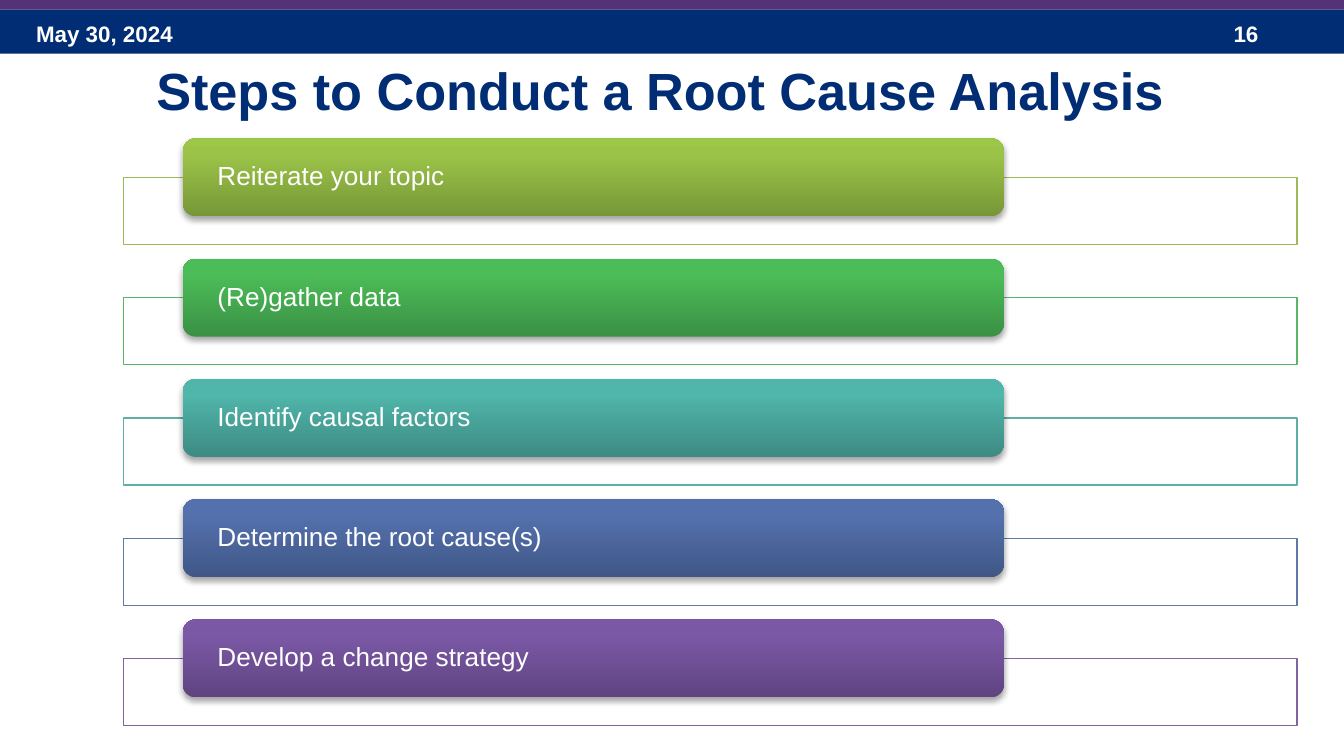
from lxml import etree
from pptx import Presentation
from pptx.dml.color import RGBColor
from pptx.enum.shapes import MSO_SHAPE
from pptx.enum.text import MSO_ANCHOR, MSO_AUTO_SIZE, PP_ALIGN
from pptx.oxml import parse_xml
from pptx.oxml.ns import nsdecls, qn
from pptx.util import Inches, Pt

RECT, ROUND = MSO_SHAPE.RECTANGLE, MSO_SHAPE.ROUNDED_RECTANGLE
TOP, MIDDLE = MSO_ANCHOR.TOP, MSO_ANCHOR.MIDDLE
LEFT, CENTER = PP_ALIGN.LEFT, PP_ALIGN.CENTER
NO_FIT = MSO_AUTO_SIZE.NONE

THEME = {
    "font": "Arial",
    "navy": "002D73",
    "purple": "553278",
    "white": "FFFFFF",
    "shadow": "000000",
    "title": 28,
    "body": 14,
    "small": 12,
    "steps": [
        ("9BBB59", "779737", "9BC348", "9DC746"),
        ("5CB565", "3A9144", "4CBC58", "4ABF57"),
        ("5EAFA6", "3D8B83", "50B5AA", "4EB8AC"),
        ("6179A8", "405786", "5471AE", "5271B0"),
        ("8064A2", "5F4480", "7B58A6", "7C57A8"),
    ],
}
STEPS = [
    "Reiterate your topic",
    "(Re)gather data",
    "Identify causal factors",
    "Determine the root cause(s)",
    "Develop a change strategy",
]


def write(shape, text, size, color="white", bold=False, align=LEFT,
          anchor=MIDDLE, side=0.1, top=0, spacing=1.0):
    frame = shape.text_frame
    frame.word_wrap = True
    frame.auto_size = NO_FIT
    frame.vertical_anchor = anchor
    frame.margin_left = frame.margin_right = Inches(side)
    frame.margin_top, frame.margin_bottom = Inches(top), 0
    para = frame.paragraphs[0]
    para.text = text
    para.alignment = align
    para.line_spacing = spacing
    font = para.runs[0].font
    font.name, font.size, font.bold = THEME["font"], Pt(THEME[size]), bold
    font.color.rgb = RGBColor.from_string(THEME[color])


def block(kind, left, top, width, height, color="white"):
    shape = slide.shapes.add_shape(
        kind, Inches(left), Inches(top), Inches(width), Inches(height))
    shape.shadow.inherit = False
    shape.fill.solid()
    shape.fill.fore_color.rgb = RGBColor.from_string(THEME[color])
    shape.line.fill.background()
    return shape


deck = Presentation()
deck.slide_width, deck.slide_height = Inches(10), Inches(10 * 9 / 16)
slide = deck.slides.add_slide(deck.slide_layouts[5])

block(RECT, 0, 0.07, 10, 0.33, "navy")
for text, left, width in [("May 30, 2024", 0.17, 2.33), ("16", 9.08, 0.75)]:
    label = slide.shapes.add_textbox(
        Inches(left), Inches(0.1), Inches(width), Inches(0.3))
    write(label, text, "small", bold=True)
block(RECT, 0, -0.02, 10, 0.09, "purple")

title = slide.shapes.title
title.left, title.top = Inches(0.16), Inches(0.38)
title.width, title.height = Inches(9.5), Inches(0.7)
write(title, "Steps to Conduct a Root Cause Analysis", "title", color="navy",
      bold=True, align=CENTER, anchor=TOP, top=0.05)

first, last = 1.03, 4.61
pitch = (last - first) / (len(STEPS) - 1)
for row, (text, tones) in enumerate(zip(STEPS, THEME["steps"])):
    edge, *stops = tones
    top = first + row * pitch

    panel = block(RECT, 0.92, top + 0.29, 8.73, 0.5)
    panel.line.color.rgb = RGBColor.from_string(edge)
    panel.line.width = Pt(0.75)
    tint = panel.fill._xPr.find(qn("a:solidFill"))[0]
    etree.SubElement(tint, qn("a:alpha"), val="90000")

    bar = block(ROUND, 1.36, top, 6.11, 0.58)
    marks = "".join(
        f'<a:gs pos="{pos}000"><a:srgbClr val="{tone}"/></a:gs>'
        for pos, tone in zip((0, 80, 100), stops))
    props = bar._element.spPr
    props.replace(props.find(qn("a:solidFill")), parse_xml(
        f'<a:gradFill {nsdecls("a")} rotWithShape="1"><a:gsLst>{marks}</a:gsLst>'
        '<a:lin ang="16200000" scaled="0"/></a:gradFill>'))
    props.replace(props.find(qn("a:effectLst")), parse_xml(
        f'<a:effectLst {nsdecls("a")}><a:outerShdw blurRad="{Pt(3.1)}" '
        f'dist="{Pt(1.8)}" dir="5400000" rotWithShape="0">'
        f'<a:srgbClr val="{THEME["shadow"]}"><a:alpha val="35000"/></a:srgbClr>'
        '</a:outerShdw></a:effectLst>'))
    write(bar, text, "body", side=0.23, spacing=0.9)

deck.save("out.pptx")
